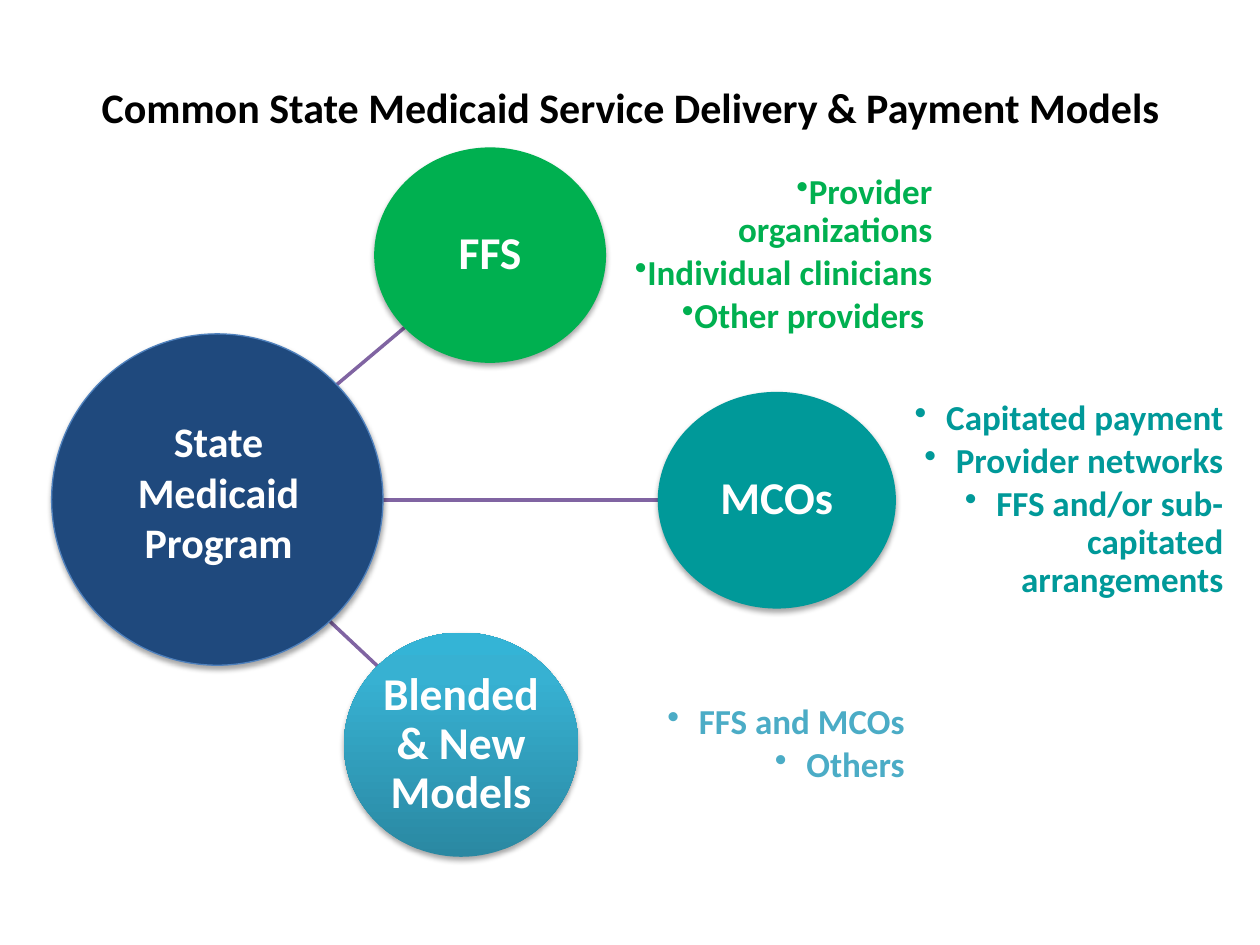
from lxml import etree
from pptx import Presentation
from pptx.dml.color import RGBColor
from pptx.enum.shapes import MSO_CONNECTOR, MSO_SHAPE
from pptx.enum.text import MSO_ANCHOR, PP_ALIGN
from pptx.oxml.ns import qn
from pptx.util import Inches, Pt

OVAL, RECT = MSO_SHAPE.OVAL, MSO_SHAPE.RECTANGLE
STRAIGHT = MSO_CONNECTOR.STRAIGHT
CENTER, RIGHT = PP_ALIGN.CENTER, PP_ALIGN.RIGHT
MIDDLE, TOP = MSO_ANCHOR.MIDDLE, MSO_ANCHOR.TOP

FONT = "Calibri"
COLORS = {
    "title": "000000", "white": "FFFFFF", "spoke": "8064A2",
    "program": "1F497D", "program_edge": "4F81BD",
    "ffs": "00B050", "mco": "009999", "blended": "4BACC6",
    "blend_dark": "2A88A2", "blend_mid": "37B1D2", "blend_light": "34B4D6",
}
BLEND_STOPS = [(0, "blend_dark"), (80, "blend_mid"), (100, "blend_light")]

# Circle box, fill, label; then list box, text colour, left margin, hanging indent, items
MODELS = [
    ((2.97, 1.17, 1.84, 1.71), "ffs", "FFS",
     (4.63, 1.17, 2.77, 1.71), "ffs", 0.38, 0.06,
     ["Provider organizations", "Individual clinicians", "Other providers "]),
    ((5.22, 3.11, 1.89, 1.72), "mco", "MCOs",
     (6.88, 3.11, 2.83, 1.72), "mco", 0.25, 0.25,
     ["Capitated payment", "Provider networks",
      "FFS and/or sub-capitated arrangements"]),
    ((2.73, 5.02, 1.86, 1.78), BLEND_STOPS, "Blended & New Models",
     (4.4, 5.02, 2.78, 1.78), "blended", 0.25, 0.25,
     ["FFS and MCOs", "Others"]),
]
SPOKES = [((2.51, 4.83), (3, 5.29)),
          ((2.51, 3.97), (5.22, 3.97)),
          ((2.51, 3.19), (3.21, 2.6))]


def rgb(name):
    return RGBColor.from_string(COLORS[name])


def inches(values):
    return [Inches(value) for value in values]


def set_frame(frame, anchor, inset_x, inset_y):
    frame.word_wrap = True
    frame.vertical_anchor = anchor
    frame.margin_left = frame.margin_right = Inches(inset_x)
    frame.margin_top = frame.margin_bottom = Inches(inset_y)


def write(paragraph, text, size, color, align=CENTER, spacing=None):
    paragraph.alignment = align
    paragraph.line_spacing = spacing
    run = paragraph.add_run()
    run.text = text
    run.font.name = FONT
    run.font.size = Pt(size)
    run.font.bold = True
    run.font.color.rgb = rgb(color)


def add_title(slide, box, text):
    frame = slide.shapes.add_textbox(*inches(box)).text_frame
    set_frame(frame, MIDDLE, 0.1, 0.05)
    write(frame.paragraphs[0], text, 24, "title")


def add_spoke(slide, start, end):
    spoke = slide.shapes.add_connector(STRAIGHT, *inches(start + end))
    spoke.line.color.rgb = rgb("spoke")
    spoke.line.width = Pt(2)
    etree.SubElement(spoke.element.spPr, qn("a:effectLst"))


def fill_gradient(shape, stops):
    """Fill from bottom to top with (percent, colour name) stops."""
    shape.fill.gradient()
    shape.fill.gradient_angle = 90
    stop_list = shape.element.spPr.find(".//" + qn("a:gsLst"))
    for old_stop in list(stop_list):
        stop_list.remove(old_stop)
    for percent, name in stops:
        stop = etree.SubElement(stop_list, qn("a:gs"), pos=str(percent * 1000))
        etree.SubElement(stop, qn("a:srgbClr"), val=COLORS[name])


def add_soft_shadow(shape):
    shape.shadow.inherit = False
    effects = shape.element.spPr.find(qn("a:effectLst"))
    shadow = etree.SubElement(
        effects, qn("a:outerShdw"), blurRad=str(Pt(3.1)), dist=str(Pt(1.8)),
        dir="5400000", rotWithShape="0")
    tint = etree.SubElement(shadow, qn("a:srgbClr"), val="000000")
    etree.SubElement(tint, qn("a:alpha"), val="35000")


def add_circle(slide, box, fill):
    circle = slide.shapes.add_shape(OVAL, *inches(box))
    if isinstance(fill, str):
        circle.fill.solid()
        circle.fill.fore_color.rgb = rgb(fill)
    else:
        fill_gradient(circle, fill)
    circle.line.fill.background()
    add_soft_shadow(circle)
    return circle


def add_program_hub(slide, box):
    left, top, width, _ = box
    hub = add_circle(slide, box, "program")
    hub.line.color.rgb = rgb("program_edge")
    hub.line.width = Pt(0.75)

    label_box = (left + 0.56, top + 0.6, width - 1.1, 1.31)
    label = slide.shapes.add_shape(RECT, *inches(label_box))
    label.shadow.inherit = False
    label.fill.solid()
    label.fill.fore_color.rgb = rgb("program")
    label.line.fill.background()
    set_frame(label.text_frame, TOP, 0.1, 0.05)
    write(label.text_frame.paragraphs[0], "State Medicaid Program", 24, "white")


def add_model_circle(slide, box, fill, label):
    frame = add_circle(slide, box, fill).text_frame
    set_frame(frame, MIDDLE, 0.02, 0.02)
    write(frame.paragraphs[0], label, 26, "white", spacing=0.9)


def add_feature_list(slide, box, color, margin, hanging, items):
    frame = slide.shapes.add_textbox(*inches(box)).text_frame
    set_frame(frame, MIDDLE, 0, 0)
    for index, item in enumerate(items):
        paragraph = frame.add_paragraph() if index else frame.paragraphs[0]
        paragraph.level = 1
        paragraph.space_after = Pt(3)
        properties = paragraph._p.get_or_add_pPr()
        properties.set("marL", str(Inches(margin)))
        properties.set("indent", str(-Inches(hanging)))
        etree.SubElement(properties, qn("a:buChar"), char="•")
        write(paragraph, item, 20, color, RIGHT, 0.9)


def main():
    deck = Presentation()
    deck.slide_width, deck.slide_height = Inches(10), Inches(7.5)
    slide = deck.slides.add_slide(deck.slide_layouts[6])

    add_title(slide, (0.17, 0.5, 9.67, 0.69),
              "Common State Medicaid Service Delivery & Payment Models")
    for start, end in SPOKES:
        add_spoke(slide, start, end)
    add_program_hub(slide, (0.41, 2.65, 2.63, 2.63))
    for circle_box, fill, label, *feature_list in MODELS:
        add_model_circle(slide, circle_box, fill, label)
        add_feature_list(slide, *feature_list)

    deck.save("out.pptx")


if __name__ == "__main__":
    main()
